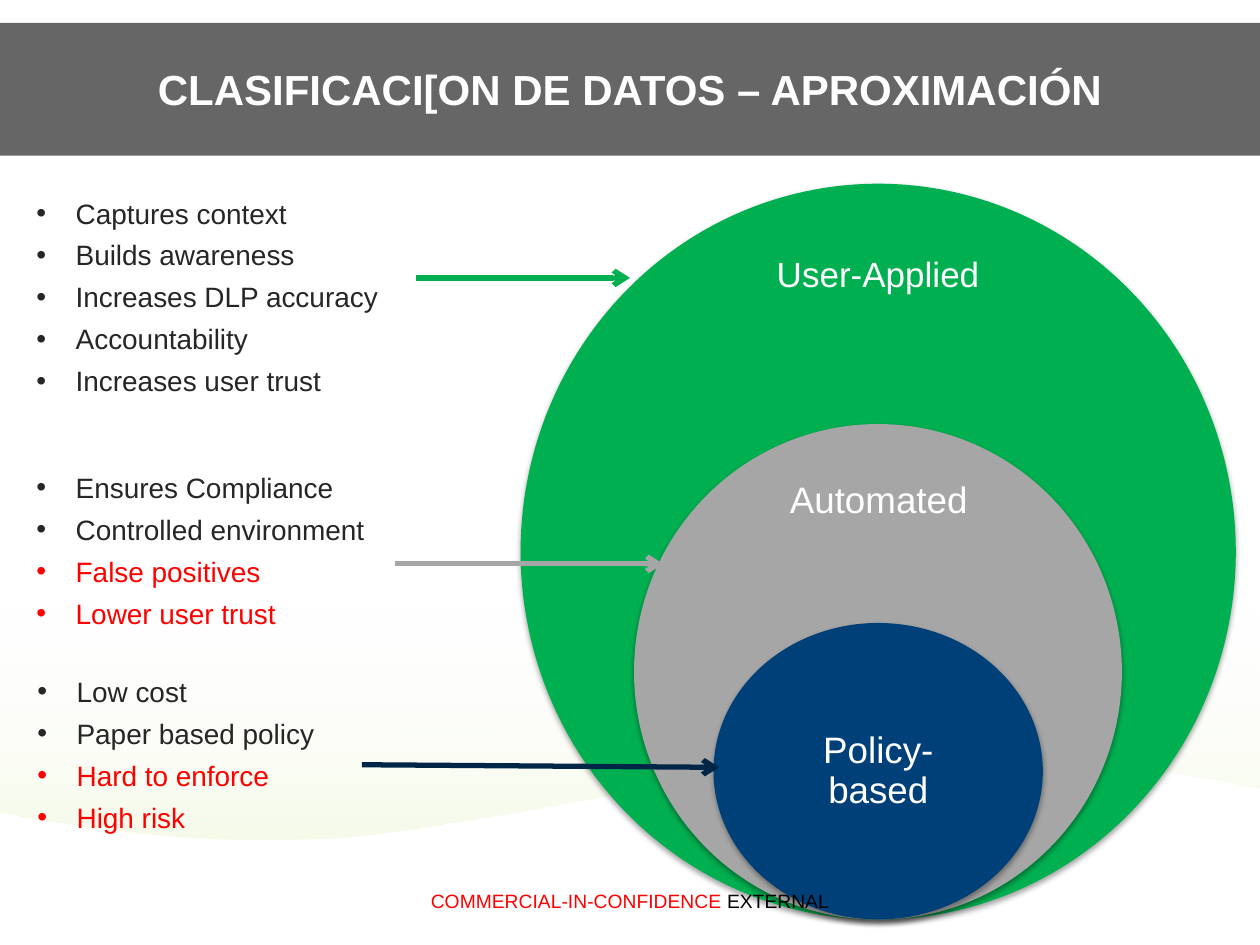
from lxml import etree
from pptx import Presentation
from pptx.dml.color import RGBColor
from pptx.enum.shapes import MSO_CONNECTOR, MSO_SHAPE
from pptx.enum.text import MSO_ANCHOR, PP_ALIGN
from pptx.oxml.ns import qn
from pptx.util import Pt

RECTANGLE, ELLIPSE = MSO_SHAPE.RECTANGLE, MSO_SHAPE.OVAL
STRAIGHT = MSO_CONNECTOR.STRAIGHT
MIDDLE, CENTER = MSO_ANCHOR.MIDDLE, PP_ALIGN.CENTER
FONT = "Arial"
COLORS = {
    "white": "FFFFFF", "black": "000000", "dark": "262626", "red": "FF0000",
    "green": "00B050", "gray": "A6A6A6", "blue": "004079", "navy": "002647",
    "leaf": "91C700", "mist": "EBF8DE",
}
WIDTH, HEIGHT = 720, 540

# Circle box, label box, label size, text, colour
CIRCLES = [
    ((297.5, 105, 408.7, 420.5), (430.5, 126, 142.5, 63.5), 20, "User-Applied", "green"),
    ((362.3, 242.3, 278.8, 283.2), (437, 260, 130.3, 53.3), 21, "Automated", "gray"),
    ((407.7, 356, 188.2, 169.4), (435.3, 398.2, 133.2, 85), 21, "Policy-based", "blue"),
]
# List box, good points, bad points
LISTS = [
    ((13.7, 103.7, 211.7, 128.2),
     ["Captures context", "Builds awareness", "Increases DLP accuracy",
      "Accountability", "Increases user trust"], []),
    ((13.7, 260.6, 208.8, 128.2),
     ["Ensures Compliance", "Controlled environment"],
     ["False positives", "Lower user trust"]),
    ((14.2, 377, 174.2, 104.4),
     ["Low cost", "Paper based policy"], ["Hard to enforce", "High risk"]),
]
ARROWS = [
    ((238, 158.8, 360, 158.8), "green"),
    ((225.5, 322.2, 379, 322.2), "gray"),
    ((206.8, 437, 411, 438.5), "navy"),
]


def rgb(name):
    return RGBColor.from_string(COLORS[name])


def points(values):
    return [Pt(value) for value in values]


def set_alpha(color_element, percent):
    etree.SubElement(color_element, qn("a:alpha"), val=str(percent * 1000))


def set_font(font, size, color, bold=False):
    font.name, font.size, font.bold = FONT, Pt(size), bold
    font.color.rgb = rgb(color)


def set_frame(frame, side, edge, wrap=True, anchor=None):
    frame.margin_left = frame.margin_right = Pt(side)
    frame.margin_top = frame.margin_bottom = Pt(edge)
    frame.word_wrap = wrap
    if anchor is not None:
        frame.vertical_anchor = anchor


def fill_shape(shape, color):
    shape.shadow.inherit = False
    shape.fill.solid()
    shape.fill.fore_color.rgb = rgb(color)
    shape.line.fill.background()


def curve(start, first, second, end, steps=24):
    """Points along a cubic curve, without its start."""
    result = []
    for step in range(1, steps + 1):
        t = step / steps
        weights = ((1 - t) ** 3, 3 * t * (1 - t) ** 2, 3 * t * t * (1 - t), t ** 3)
        result.append(tuple(
            sum(weight * point[axis] for weight, point in
                zip(weights, (start, first, second, end))) for axis in (0, 1)))
    return result


def add_background(page, box):
    """Soft green hill whose lower edge is a wave."""
    left, top, width, height = box
    right, trough = left + width, (left + 185, top + height - 2)
    crest, corner = (left + 510.5, top + 86), (right, top + 107.5)
    start = (left, top + 119)
    edge = curve(corner, corner, (left + 619, top + 81.5), crest)
    edge += curve(crest, (left + 433, top + 89.5), (left + 258, top + 131), trough)
    edge += curve(trough, (left + 114.5, top + 137), (left + 62, top + 130), start)
    outline = [(left, top), (right, top), corner] + edge
    builder = page.shapes.build_freeform(Pt(start[0]), Pt(start[1]))
    builder.add_line_segments([points(point) for point in outline])
    hill = builder.convert_to_shape()
    fill_shape(hill, "leaf")
    hill.fill.gradient()
    hill.fill.gradient_angle = 90
    for stop, color, alpha in zip(hill.fill.gradient_stops, ("leaf", "mist"), (9, 0)):
        stop.color.rgb = rgb(color)
    for element, alpha in zip(hill._element.iter(qn("a:srgbClr")), (9, 0)):
        set_alpha(element, alpha)


def add_band(page, box):
    band = page.shapes.add_shape(RECTANGLE, *points(box))
    fill_shape(band, "dark")
    set_alpha(next(band._element.iter(qn("a:srgbClr"))), 70)


def add_title(page, box, text):
    title = page.shapes.title
    title.left, title.top, title.width, title.height = points(box)
    page.shapes._spTree.append(title._element)  # in front of the band
    set_frame(title.text_frame, 9.4, 5, anchor=MIDDLE)
    para = title.text_frame.paragraphs[0]
    para.text, para.alignment = text, CENTER
    set_font(para.font, 24, "white", bold=True)


def add_shadow(shape):
    effects = shape._element.spPr.find(qn("a:effectLst"))
    shadow = etree.SubElement(effects, qn("a:outerShdw"), blurRad=str(Pt(3.1)),
                              dist=str(Pt(1.8)), dir="5400000", rotWithShape="0")
    set_alpha(etree.SubElement(shadow, qn("a:srgbClr"), val=COLORS["black"]), 35)


def add_circles(page):
    group = page.shapes.add_group_shape()
    for circle_box, label_box, size, text, color in CIRCLES:
        circle = group.shapes.add_shape(ELLIPSE, *points(circle_box))
        fill_shape(circle, color)
        add_shadow(circle)
        label = group.shapes.add_textbox(*points(label_box))
        set_frame(label.text_frame, 11.5, 11.5, anchor=MIDDLE)
        para = label.text_frame.paragraphs[0]
        para.text, para.alignment, para.line_spacing = text, CENTER, 0.9
        set_font(para.font, size, "white")


def add_list(page, box, good, bad):
    frame = page.shapes.add_textbox(*points(box)).text_frame
    set_frame(frame, 7.2, 3.6, wrap=False)
    entries = [(text, "dark") for text in good] + [(text, "red") for text in bad]
    for index, (text, color) in enumerate(entries):
        para = frame.add_paragraph() if index else frame.paragraphs[0]
        para.text, para.line_spacing = text, 1.25
        properties = para._p.get_or_add_pPr()
        properties.set("marL", str(Pt(22.5)))
        properties.set("indent", str(Pt(-22.5)))
        etree.SubElement(properties, qn("a:buFont"), typeface=FONT)
        etree.SubElement(properties, qn("a:buChar"), char="•")
        set_font(para.font, 16, color)


def add_arrow(page, ends, color):
    arrow = page.shapes.add_connector(STRAIGHT, *points(ends))
    arrow.line.width = Pt(3)
    arrow.line.color.rgb = rgb(color)
    etree.SubElement(arrow.line._get_or_add_ln(), qn("a:tailEnd"), type="arrow")
    etree.SubElement(arrow._element.spPr, qn("a:effectLst"))


def add_marking(page, box):
    frame = page.shapes.add_textbox(*points(box)).text_frame
    set_frame(frame, 9.4, 5, anchor=MIDDLE)
    para = frame.paragraphs[0]
    para.alignment = CENTER
    for text, color in (("COMMERCIAL-IN-CONFIDENCE", "red"), (" EXTERNAL", "black")):
        span = para.add_run()
        span.text = text
        set_font(span.font, 11, color)


def main():
    deck = Presentation()
    deck.slide_width, deck.slide_height = Pt(WIDTH), Pt(HEIGHT)
    page = deck.slides.add_slide(deck.slide_layouts[5])
    # Backdrop
    add_band(page, (0, 13, WIDTH, 76))
    add_background(page, (-1.5, 345, 728.5, 136))
    # Nested circles, lists and arrows
    add_circles(page)
    for box, good, bad in LISTS:
        add_list(page, box, good, bad)
    for ends, color in ARROWS:
        add_arrow(page, ends, color)
    # Title and marking
    add_title(page, (0, 12.5, WIDTH, 76), "CLASIFICACI[ON DE DATOS – APROXIMACIÓN")
    add_marking(page, (0, 500.5, WIDTH, 28.8))
    deck.save("out.pptx")


if __name__ == "__main__":
    main()
